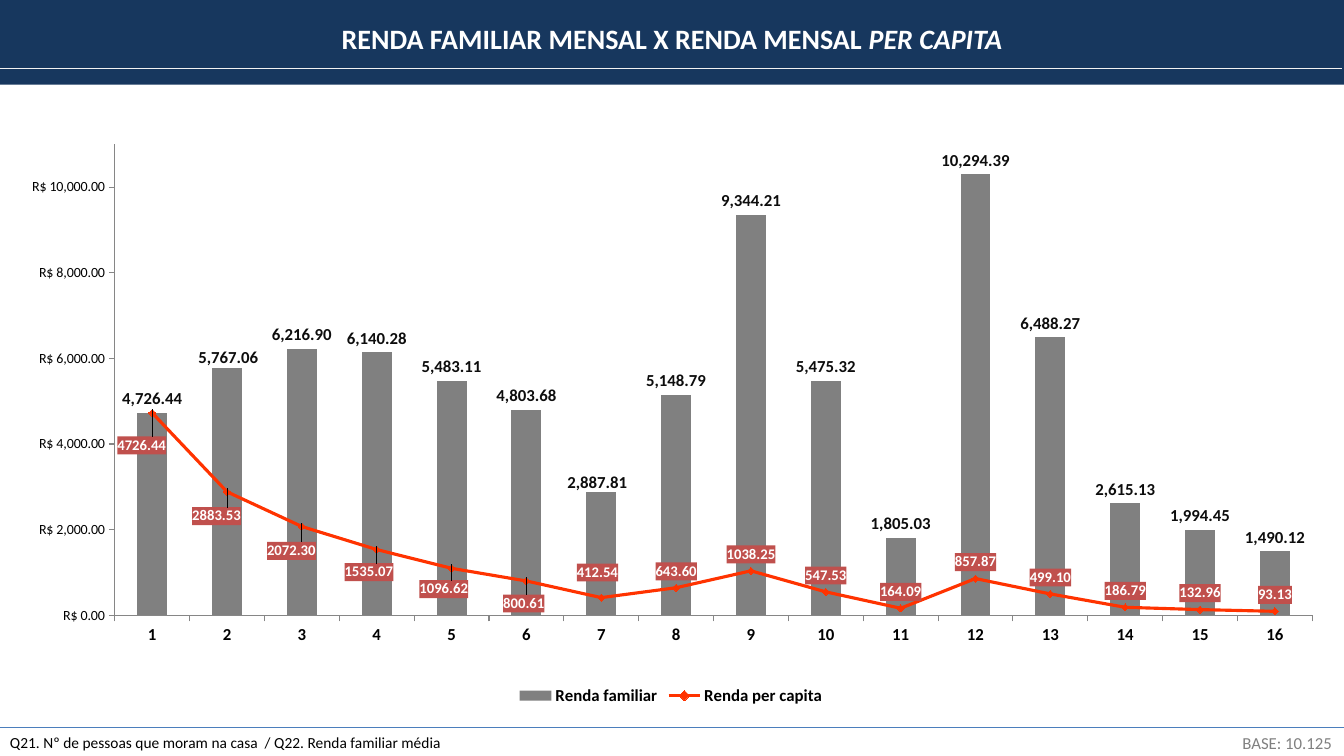
from copy import deepcopy
from dataclasses import dataclass

from lxml import etree
from pptx import Presentation
from pptx.chart.data import CategoryChartData
from pptx.dml.color import RGBColor
from pptx.enum.chart import (XL_CHART_TYPE, XL_LABEL_POSITION, XL_LEGEND_POSITION,
                             XL_MARKER_STYLE, XL_TICK_MARK)
from pptx.enum.shapes import MSO_CONNECTOR, MSO_SHAPE
from pptx.enum.text import PP_ALIGN
from pptx.oxml import parse_xml
from pptx.oxml.ns import nsdecls, qn
from pptx.util import Inches, Pt

LEFT, CENTER, RIGHT = PP_ALIGN.LEFT, PP_ALIGN.CENTER, PP_ALIGN.RIGHT
COLUMNS = XL_CHART_TYPE.COLUMN_CLUSTERED
ABOVE, OUTSIDE_END = XL_LABEL_POSITION.ABOVE, XL_LABEL_POSITION.OUTSIDE_END
LEGEND_BOTTOM = XL_LEGEND_POSITION.BOTTOM
DIAMOND = XL_MARKER_STYLE.DIAMOND
TICK_OUT, TICK_NONE = XL_TICK_MARK.OUTSIDE, XL_TICK_MARK.NONE
STRAIGHT, RECTANGLE = MSO_CONNECTOR.STRAIGHT, MSO_SHAPE.RECTANGLE


@dataclass(frozen=True)
class Theme:
    font: str = "Calibri"
    navy: str = "17375E"
    white: str = "FFFFFF"
    black: str = "000000"
    rule_light: str = "F2F2F2"
    rule_blue: str = "4B7EBC"
    gray: str = "808080"
    axis: str = "868686"
    orange: str = "FF3300"
    label_dark: str = "0D0D0D"
    label_fill: str = "C0504D"
    title_size: float = 20
    base_size: float = 12
    note_size: float = 11
    line_label_size: float = 10.5
    scale_size: float = 10


@dataclass(frozen=True)
class Rule:
    start_x: float
    end_x: float
    y: float
    color: str
    width: float


@dataclass(frozen=True)
class IncomeSeries:
    name: str
    values: tuple
    label_format: str
    label_size: float
    label_color: str
    label_position: XL_LABEL_POSITION
    label_shifts: dict  # point index: shift as a fraction of the chart


THEME = Theme()

RULES = [
    Rule(0, 13.33, 7.22, THEME.rule_blue, 0.75),
    Rule(-0.03, 13.31, 0.68, THEME.rule_light, 1),
]

FAMILY = IncomeSeries(
    "Renda familiar",
    (4726.44, 5767.06, 6216.9, 6140.28, 5483.11, 4803.68, 2887.81, 5148.79,
     9344.21, 5475.32, 1805.03, 10294.39, 6488.27, 2615.13, 1994.45, 1490.12),
    "#,##0.00", THEME.base_size, THEME.label_dark, OUTSIDE_END,
    {1: (0.001, 0.005), 6: (-0.003, 0.008)})

PER_CAPITA = IncomeSeries(
    "Renda per capita",
    (4726.44, 2883.53, 2072.3, 1535.07, 1096.62, 800.61, 412.54, 643.6,
     1038.25, 547.53, 164.09, 857.87, 499.1, 186.79, 132.96, 93.13),
    "0.00", THEME.line_label_size, THEME.white, ABOVE,
    {0: (-0.008, 0.084), 1: (-0.008, 0.07), 2: (-0.008, 0.07), 3: (-0.006, 0.067),
     4: (-0.006, 0.064), 5: (-0.002, 0.067), 6: (-0.003, -0.015)})


def rgb(color: str) -> RGBColor:
    return RGBColor.from_string(color)


def style_font(font, size: float, color: str, bold: bool = False, italic: bool = False) -> None:
    font.name, font.size, font.bold, font.italic = THEME.font, Pt(size), bold, italic
    font.color.rgb = rgb(color)


def add_text(slide, text: str, left: float, top: float, width: float, height: float, *,
             size: float, color: str, align: PP_ALIGN = LEFT, bold: bool = False,
             italic_tail: str = "") -> None:
    frame = slide.shapes.add_textbox(*map(Inches, (left, top, width, height))).text_frame
    frame.word_wrap = True
    paragraph = frame.paragraphs[0]
    paragraph.alignment = align
    for part, italic in ((text, False), (italic_tail, True)):
        if part:
            run = paragraph.add_run()
            run.text = part
            style_font(run.font, size, color, bold, italic)


def add_rule(slide, rule: Rule) -> None:
    y = Inches(rule.y)
    line = slide.shapes.add_connector(STRAIGHT, Inches(rule.start_x), y, Inches(rule.end_x), y)
    line.line.color.rgb = rgb(rule.color)
    line.line.width = Pt(rule.width)
    etree.SubElement(line._element.spPr, qn("a:effectLst"))


def move_to_line_plot(chart) -> None:
    """Turn the second column series into a line on the same axes."""
    bar_plot = chart._chartSpace.find(".//" + qn("c:barChart"))
    series = bar_plot.findall(qn("c:ser"))[1]
    for invert in series.findall(qn("c:invertIfNegative")):
        series.remove(invert)
    line_plot = parse_xml(f'<c:lineChart {nsdecls("c")}><c:grouping val="standard"/>'
                          '<c:varyColors val="0"/><c:marker val="1"/></c:lineChart>')
    line_plot.insert(2, series)
    for axis_id in bar_plot.findall(qn("c:axId")):
        line_plot.append(deepcopy(axis_id))
    bar_plot.addnext(line_plot)


def manual_layout(**settings):
    items = "".join(f'<c:{name} val="{value}"/>' for name, value in settings.items())
    return parse_xml(f'<c:layout {nsdecls("c")}><c:manualLayout>{items}'
                     '</c:manualLayout></c:layout>')


def add_labels(series, income: IncomeSeries, fill: str = "") -> None:
    labels = series.data_labels
    labels.show_value = True
    labels.number_format = income.label_format
    labels.number_format_is_linked = False
    labels.position = income.label_position
    style_font(labels.font, income.label_size, income.label_color, bold=True)
    element = labels._element
    if fill:
        element.find(qn("c:numFmt")).addnext(parse_xml(
            f'<c:spPr {nsdecls("c", "a")}><a:solidFill><a:srgbClr val="{fill}"/>'
            '</a:solidFill></c:spPr>'))
    # Shifted labels keep the shared format
    shared = [child for child in element if child.tag != qn("c:showLeaderLines")]
    for position, (index, (x, y)) in enumerate(income.label_shifts.items()):
        label = parse_xml(f'<c:dLbl {nsdecls("c")}><c:idx val="{index}"/></c:dLbl>')
        label.append(manual_layout(x=x, y=y))
        label.extend(deepcopy(shared))
        element.insert(position, label)


def style_axis(axis, size: float, bold: bool) -> None:
    axis.has_major_gridlines = False
    axis.major_tick_mark, axis.minor_tick_mark = TICK_OUT, TICK_NONE
    axis.format.line.color.rgb = rgb(THEME.axis)
    axis.format.line.width = Pt(0.75)
    style_font(axis.tick_labels.font, size, THEME.black, bold)


def add_income_chart(slide) -> None:
    data = CategoryChartData()
    data.categories = [str(people) for people in range(1, len(FAMILY.values) + 1)]
    for income in (FAMILY, PER_CAPITA):
        data.add_series(income.name, income.values)
    chart = slide.shapes.add_chart(COLUMNS, *map(Inches, (0.15, 1.27, 13.01, 5.77)), data).chart
    chart.has_title = False
    style_font(chart.font, 18, THEME.black)
    move_to_line_plot(chart)

    # Plot area
    plot_area = chart._chartSpace.find(".//" + qn("c:plotArea"))
    for layout in plot_area.findall(qn("c:layout")):
        plot_area.remove(layout)
    plot_area.insert(0, manual_layout(layoutTarget="inner", xMode="edge", yMode="edge",
                                      x=0.076, y=0.028, w=0.913, h=0.81))

    # Axes
    style_axis(chart.category_axis, THEME.base_size, bold=True)
    scale = chart.value_axis
    style_axis(scale, THEME.scale_size, bold=False)
    scale.minimum_scale, scale.maximum_scale, scale.major_unit = 0, 11000, 2000
    scale.tick_labels.number_format = '"R$"\\ #,##0.00'
    scale.tick_labels.number_format_is_linked = False

    # Columns and line
    column_plot, line_plot = chart.plots
    column_plot.gap_width = 150
    column_plot.vary_by_categories = False
    columns, line = column_plot.series[0], line_plot.series[0]
    columns.format.fill.solid()
    columns.format.fill.fore_color.rgb = rgb(THEME.gray)
    line.smooth = False
    line.format.line.color.rgb = rgb(THEME.orange)
    line.format.line.width = Pt(2.25)
    line.marker.style, line.marker.size = DIAMOND, 5
    line.marker.format.fill.solid()
    line.marker.format.fill.fore_color.rgb = rgb(THEME.orange)
    line.marker.format.line.color.rgb = rgb(THEME.orange)
    add_labels(columns, FAMILY)
    add_labels(line, PER_CAPITA, fill=THEME.label_fill)

    # Legend
    chart.has_legend = True
    chart.legend.position = LEGEND_BOTTOM
    chart.legend.include_in_layout = False
    style_font(chart.legend.font, THEME.base_size, THEME.black, bold=True)


def main() -> None:
    presentation = Presentation()
    presentation.slide_width, presentation.slide_height = Inches(13.33), Inches(7.5)
    slide = presentation.slides.add_slide(presentation.slide_layouts[6])
    footer_rule, title_rule = RULES

    # Footer
    add_rule(slide, footer_rule)
    add_text(slide, "Q21. Nº de pessoas que moram na casa  / Q22. Renda familiar média",
             0, 7.22, 13.31, 0.29, size=THEME.note_size, color=THEME.black)
    add_text(slide, "BASE: 10.125", 11.86, 7.22, 1.45, 0.3,
             size=THEME.base_size, color=THEME.gray, align=RIGHT)

    # Title band
    band = slide.shapes.add_shape(RECTANGLE, *map(Inches, (-0.01, 0, 13.34, 0.84)))
    band.shadow.inherit = False
    band.fill.solid()
    band.fill.fore_color.rgb = rgb(THEME.navy)
    band.line.fill.background()
    add_text(slide, "RENDA FAMILIAR MENSAL X RENDA MENSAL ", 0, 0.16, 13.33, 0.44,
             size=THEME.title_size, color=THEME.white, align=CENTER, bold=True,
             italic_tail="PER CAPITA")
    add_rule(slide, title_rule)

    add_income_chart(slide)
    presentation.save("out.pptx")


if __name__ == "__main__":
    main()
